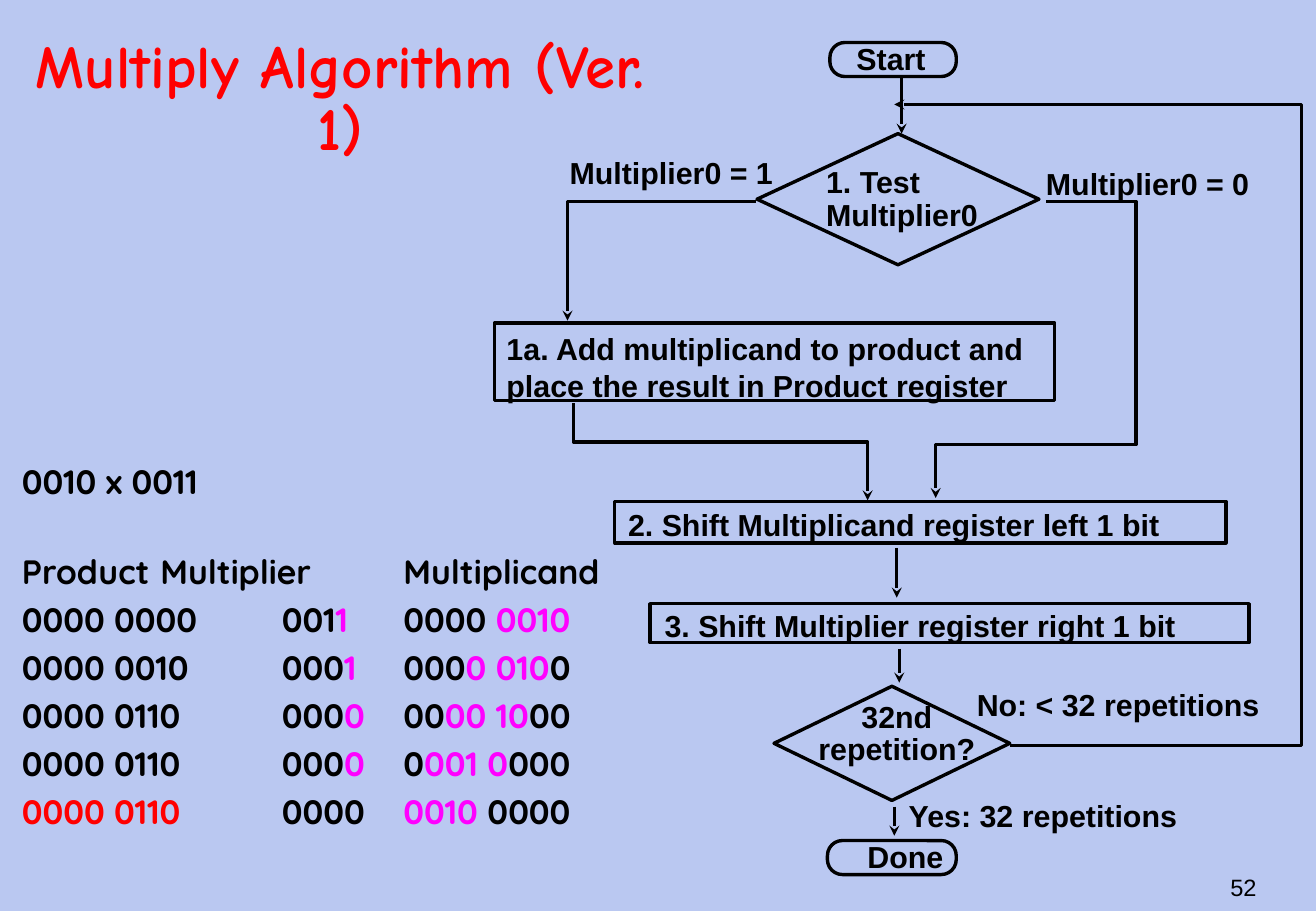
from lxml import etree
from pptx import Presentation
from pptx import util as u
from pptx.dml.color import RGBColor
from pptx.enum import shapes, text
from pptx.oxml import ns

PX = 9144
BACKGROUND = RGBColor(0xBA, 0xC8, 0xF1)
BLACK = RGBColor(0, 0, 0)
RED = RGBColor(0xFF, 0, 0)
MAGENTA = RGBColor(0xFF, 0, 0xFF)
LEFT, CENTER, RIGHT = text.PP_ALIGN.LEFT, text.PP_ALIGN.CENTER, text.PP_ALIGN.RIGHT
RECTANGLE = shapes.MSO_SHAPE.RECTANGLE
ROUNDED = shapes.MSO_SHAPE.ROUNDED_RECTANGLE
DIAMOND = shapes.MSO_SHAPE.DIAMOND

STEPS = [
    (ROUNDED, (283, 15, 104, 28), ["Start"], (295, 8, 84, 40), LEFT, 1),
    (DIAMOND, (223, 90, 232, 108), ["1. Test", "Multiplier0"], (270, 113, 157, 64), LEFT, 0.9),
    (RECTANGLE, (7, 246, 461, 64),
     ["1a. Add multiplicand to product and", "place the result in Product register"],
     (7, 247, 453, 70), LEFT, 1),
    (RECTANGLE, (106, 393, 503, 34), ["2. Shift Multiplicand register left 1 bit"],
     (107, 392, 496, 40), LEFT, 1),
    (RECTANGLE, (135, 477, 493, 32), ["3. Shift Multiplier register right 1 bit"],
     (137, 475, 478, 40), LEFT, 1),
    (DIAMOND, (237, 545, 194, 94), ["32nd", "repetition?"], (257, 553, 162, 64), CENTER, 0.9),
    (ROUNDED, (281, 672, 106, 28), ["Done"], (304, 665, 90, 40), LEFT, 1),
]
BRANCHES = [
    ("Multiplier0 = 1", (59, 102, 203, 40)),
    ("Multiplier0 = 0", (451, 111, 203, 40)),
    ("No: < 32 repetitions", (394, 540, 274, 40)),
    ("Yes: 32 repetitions", (338, 631, 262, 40)),
]
ROUTES = [
    [(222, 146), (67, 146), (67, 244)],
    [(72, 312), (72, 344), (314, 344), (314, 392)],
    [(461, 146), (535, 146), (535, 346), (370, 346), (370, 390)],
    [(431, 594), (671, 594), (671, 66), (336, 66)],
]
DROPS = [(342, 44, 90), (338, 431, 472), (340, 514, 542), (336, 644, 668)]

TRACE = [
    [("0010 x 0011", BLACK)],
    [("Product\tMultiplier\tMultiplicand", BLACK)],
    [("0000 0000\t001", BLACK), ("1", MAGENTA), ("\t0000 ", BLACK), ("0010", MAGENTA)],
    [("0000 0010\t000", BLACK), ("1", MAGENTA), ("\t000", BLACK), ("0 010", MAGENTA), ("0", BLACK)],
    [("0000 0110\t000", BLACK), ("0", MAGENTA), ("\t00", BLACK), ("00 10", MAGENTA), ("00", BLACK)],
    [("0000 0110\t000", BLACK), ("0", MAGENTA), ("\t0", BLACK), ("001 0", MAGENTA), ("000", BLACK)],
    [("0000 0110", RED), ("\t0000\t", BLACK), ("0010", MAGENTA), (" 0000", BLACK)],
]


def px(*lengths):
    return [length * PX for length in lengths]


def shift(box, origin):
    return (box[0] + origin[0], box[1] + origin[1], *box[2:])


def add_run(paragraph, words, font, size, color=BLACK, bold=True):
    run = paragraph.add_run()
    run.text = words
    run.font.name = font
    run.font.size = u.Pt(size)
    run.font.bold = bold
    run.font.color.rgb = color


def add_label(slide, box, lines, align=LEFT, spacing=1):
    frame = slide.shapes.add_textbox(*px(*box)).text_frame
    frame.word_wrap = False
    frame.auto_size = text.MSO_AUTO_SIZE.SHAPE_TO_FIT_TEXT
    for index, words in enumerate(lines):
        paragraph = frame.add_paragraph() if index else frame.paragraphs[0]
        paragraph.alignment = align
        paragraph.line_spacing = spacing
        add_run(paragraph, words, "Arial", 18)


def add_line_of_text(slide, box, words, align, font, size, color, bold, spacing=1):
    frame = slide.shapes.add_textbox(*px(*box)).text_frame
    frame.word_wrap = True
    frame.vertical_anchor = text.MSO_ANCHOR.MIDDLE
    paragraph = frame.paragraphs[0]
    paragraph.alignment = align
    paragraph.line_spacing = spacing
    add_run(paragraph, words, font, size, color, bold)


def style_outline(outline):
    outline.line.color.rgb = BLACK
    outline.line.width = u.Pt(2)


def add_arrowhead(arrow):
    style_outline(arrow)
    etree.SubElement(arrow.line._get_or_add_ln(), ns.qn("a:tailEnd"), type="stealth")


def draw_trace(slide, box):
    frame = slide.shapes.add_textbox(*px(*box)).text_frame
    frame.word_wrap = True
    frame.margin_left = 18 * PX
    for index, runs in enumerate(TRACE):
        paragraph = frame.add_paragraph() if index else frame.paragraphs[0]
        tabs = etree.SubElement(paragraph._p.get_or_add_pPr(), ns.qn("a:tabLst"))
        for column in range(3):
            etree.SubElement(tabs, ns.qn("a:tab"), pos=str((114 + 100 * column) * PX), algn="l")
        paragraph.line_spacing = 1.1 if index else 0.9
        if index:
            paragraph.space_before = u.Pt(27 if index == 1 else 2)
        for words, color in runs:
            add_run(paragraph, words, "Quicksand", 20, color)


def draw_flowchart(slide, origin):
    for kind, box, lines, label_box, align, spacing in STEPS:
        step = slide.shapes.add_shape(kind, *px(*shift(box, origin)))
        step.shadow.inherit = False
        step.fill.background()
        style_outline(step)
        if kind == ROUNDED:
            step.adjustments[0] = 0.44
        add_label(slide, shift(label_box, origin), lines, align, spacing)
    for words, box in BRANCHES:
        add_label(slide, shift(box, origin), [words])
    for points in ROUTES:
        start, *corners = [shift(point, origin) for point in points]
        builder = slide.shapes.build_freeform(*start, scale=PX)
        builder.add_line_segments(corners, close=False)
        route = builder.convert_to_shape()
        route.shadow.inherit = False
        route.fill.background()
        add_arrowhead(route)
    for x, top, bottom in DROPS:
        ends = shift((x, top), origin) + shift((x, bottom), origin)
        drop = slide.shapes.add_connector(shapes.MSO_CONNECTOR.STRAIGHT, *px(*ends))
        add_arrowhead(drop)
        etree.SubElement(drop._element.spPr, ns.qn("a:effectLst"))


def main():
    deck = Presentation()
    deck.slide_width, deck.slide_height = px(1083, 750)
    slide = deck.slides.add_slide(deck.slide_layouts[6])
    slide.background.fill.solid()
    slide.background.fill.fore_color.rgb = BACKGROUND
    add_line_of_text(slide, (0, 37, 560, 92), "Multiply Algorithm (Ver. 1)",
                     CENTER, "Comic Neue", 36, RED, True, 0.85)
    draw_trace(slide, (0, 378, 517, 348))
    draw_flowchart(slide, (400, 20))
    add_line_of_text(slide, (818, 705, 226, 50), "52", RIGHT, "Arial", 14, BLACK, False)
    deck.save("out.pptx")


if __name__ == "__main__":
    main()
